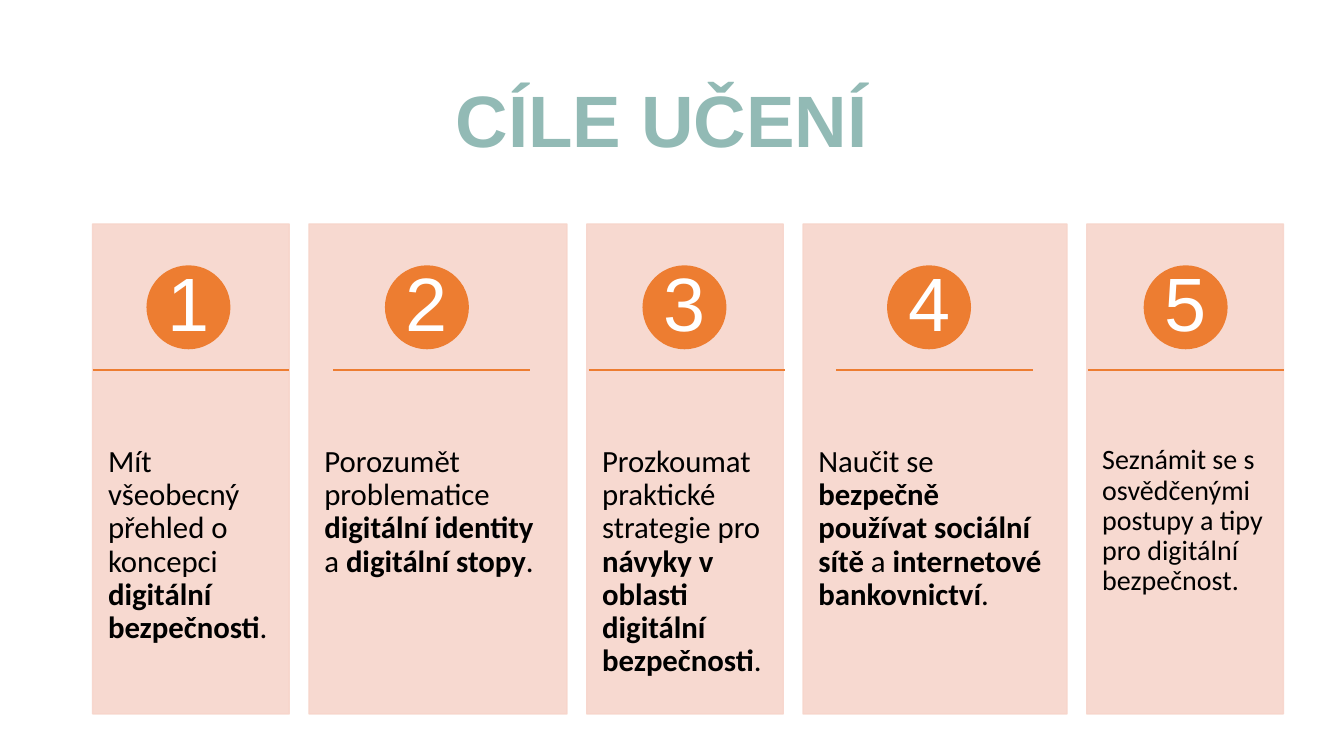
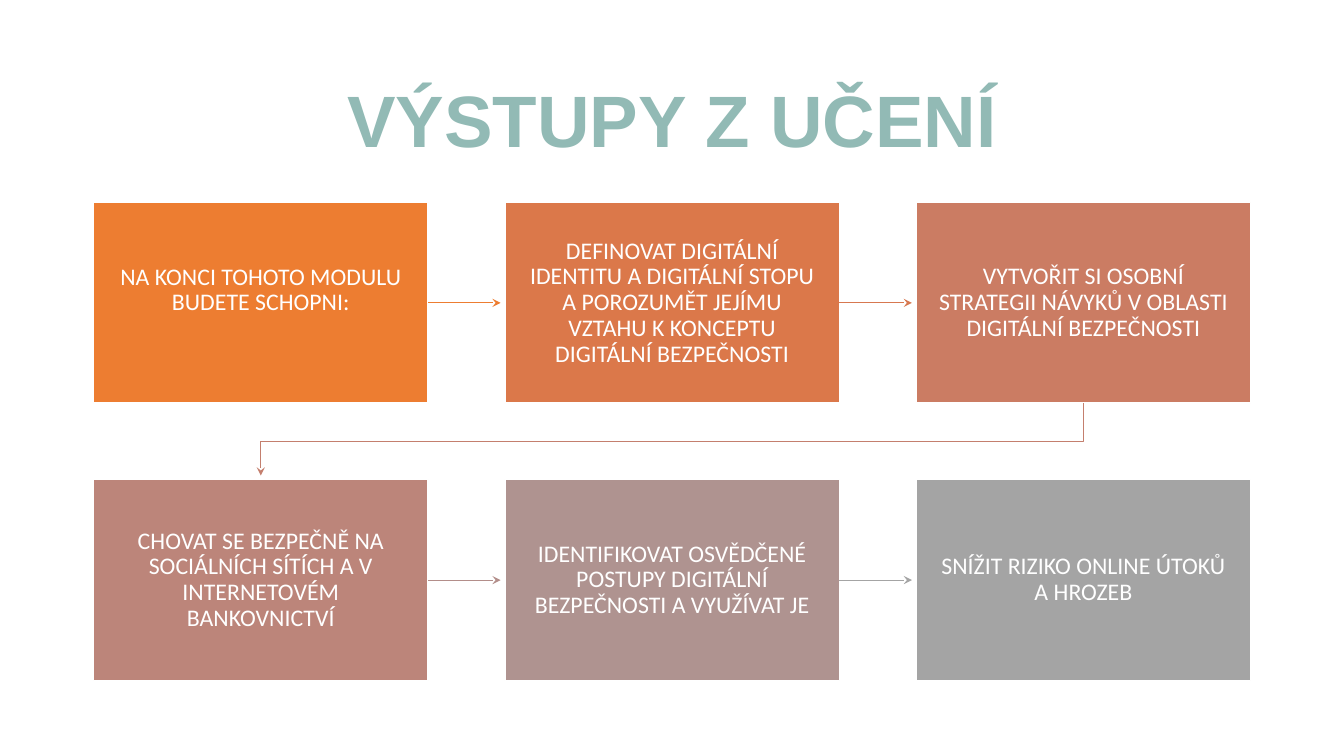
from dataclasses import dataclass
from typing import Any

from lxml.etree import SubElement
from pptx import Presentation
from pptx.dml.color import RGBColor
from pptx.dml.fill import FillFormat
from pptx.dml.line import LineFormat
from pptx.enum.shapes import MSO_CONNECTOR, MSO_SHAPE
from pptx.enum.text import MSO_ANCHOR, MSO_AUTO_SIZE, PP_ALIGN
from pptx.oxml.ns import qn
from pptx.shapes.autoshape import Shape
from pptx.shapes.connector import Connector
from pptx.slide import Slide
from pptx.text.text import TextFrame
from pptx.util import Pt

TITLE_COLOR = "92BAB5"
ACCENT = "ED7D31"
CARD_COLOR = "F7D5CB"
WHITE = "FFFFFF"
BLACK = "000000"

TITLE_BOX = (66, 44, 828, 89)
TITLE_ONLY = 5

CARD_LEFT, CARD_TOP, CARD_HEIGHT, CARD_GAP = 66.2, 160, 350, 14.1
CARD_INSETS = (11, 158.4, 11, 26)
BADGE_TOP, BADGE_SIZE = 190, 59
RULE_TOP, RULE_WIDTH = 264.2, 140.4

STEP_LEFT, STEP_TOP, STEP_WIDTH, STEP_HEIGHT = 66.8, 144.7, 239, 143.3
STEP_PITCH_X, STEP_PITCH_Y, STEP_COLUMNS = 293.8, 198, 3
ARROW_GAP = 3


@dataclass(frozen=True)
class Goal:
    """Phrases alternate between regular and bold."""
    phrases: tuple[str, ...]
    width: float = 140.4
    badge_shift: float = 0
    rule_shift: float = 0
    size: float = 22


@dataclass(frozen=True)
class Step:
    text: str
    color: str
    arrow_color: str = ""
    extra_bottom: float = 0


GOALS = (
    Goal(("Mít všeobecný přehled o koncepci ", "digitální bezpečnosti", "."),
         badge_shift=-1.8),
    Goal(("Porozumět problematice ", "digitální identity ", "a ",
          "digitální stopy", "."), 184.3, -7.9, -4.7),
    Goal(("Prozkoumat praktické strategie pro ",
          "návyky v oblasti digitální bezpečnosti", "."),
         badge_shift=-0.4, rule_shift=1.4),
    Goal(("Naučit se ", "bezpečně používat sociální sítě ", "a ",
          "internetové bankovnictví", "."), 188.6, -4.3, -0.4),
    Goal(("Seznámit se s osvědčenými postupy a tipy pro digitální bezpečnost.",),
         badge_shift=0.4, rule_shift=0.7, size=20),
)

STEPS = (
    Step("NA KONCI TOHOTO MODULU BUDETE SCHOPNI:", ACCENT, ACCENT, 18),
    Step("DEFINOVAT DIGITÁLNÍ IDENTITU A DIGITÁLNÍ STOPU A POROZUMĚT JEJÍMU "
         "VZTAHU K KONCEPTU DIGITÁLNÍ BEZPEČNOSTI", "DB784A", "D77850"),
    Step("VYTVOŘIT SI OSOBNÍ STRATEGII NÁVYKŮ V OBLASTI DIGITÁLNÍ BEZPEČNOSTI",
         "CB7C63", "C47F6E"),
    Step("CHOVAT SE BEZPEČNĚ NA SOCIÁLNÍCH SÍTÍCH A V INTERNETOVÉM BANKOVNICTVÍ",
         "BC857A", "B38E8A"),
    Step("IDENTIFIKOVAT OSVĚDČENÉ POSTUPY DIGITÁLNÍ BEZPEČNOSTI A VYUŽÍVAT JE",
         "AF9390", "A4A4A4"),
    Step("SNÍŽIT RIZIKO ONLINE ÚTOKŮ A HROZEB", "A4A4A4"),
)


def apply_formats(target: Any, formats: dict[str, Any]) -> None:
    for attribute, value in formats.items():
        setattr(target, attribute, value)


def paint(fill: FillFormat, color: str, opacity: int = 100) -> None:
    fill.solid()
    fill.fore_color.rgb = RGBColor.from_string(color)
    if opacity < 100:
        tint = fill._xPr.find(qn("a:solidFill"))[0]
        SubElement(tint, qn("a:alpha"), val=str(opacity * 1000))


def draw_line(line: LineFormat, color: str, width: float, opacity: int = 100,
              arrow: bool = False) -> None:
    line.width = Pt(width)
    paint(line.fill, color, opacity)
    if arrow:
        SubElement(line._get_or_add_ln(), qn("a:tailEnd"), type="stealth")


def write(frame: TextFrame, phrases: tuple[str, ...], size: float, color: str,
          font: str = "Calibri", align: PP_ALIGN = PP_ALIGN.CENTER,
          anchor: MSO_ANCHOR = MSO_ANCHOR.MIDDLE, wrap: bool = True,
          insets: tuple[float, ...] = (7.2, 3.6, 7.2, 3.6),
          all_bold: bool = False) -> None:
    left, top, right, bottom = map(Pt, insets)
    apply_formats(frame, {
        "auto_size": MSO_AUTO_SIZE.NONE, "word_wrap": wrap,
        "vertical_anchor": anchor, "margin_left": left, "margin_top": top,
        "margin_right": right, "margin_bottom": bottom})
    paragraph = frame.paragraphs[0]
    apply_formats(paragraph, {"alignment": align, "line_spacing": 0.9})
    for index, phrase in enumerate(phrases):
        run = paragraph.add_run()
        run.text = phrase
        apply_formats(run.font, {"name": font, "size": Pt(size),
                                 "bold": all_bold or index % 2 == 1})
        paint(run.font.fill, color)


def add_block(slide: Slide, kind: MSO_SHAPE, box: tuple[float, ...],
              color: str, outline: str, opacity: int = 100) -> Shape:
    block = slide.shapes.add_shape(kind, *map(Pt, box))
    block.shadow.inherit = False
    paint(block.fill, color, opacity)
    draw_line(block.line, outline, 1, opacity)
    return block


def add_straight(slide: Slide, start: tuple[float, float],
                 end: tuple[float, float], color: str, width: float,
                 arrow: bool = False) -> Connector:
    straight = slide.shapes.add_connector(
        MSO_CONNECTOR.STRAIGHT, *map(Pt, start + end))
    draw_line(straight.line, color, width, arrow=arrow)
    SubElement(straight._element.spPr, qn("a:effectLst"))
    return straight


def add_titled_slide(deck: Any, heading: str) -> Slide:
    slide = deck.slides.add_slide(deck.slide_layouts[TITLE_ONLY])
    title = slide.shapes.title
    apply_formats(title, dict(zip(("left", "top", "width", "height"),
                                  map(Pt, TITLE_BOX))))
    write(title.text_frame, (heading,), 52, TITLE_COLOR, "Arial", all_bold=True)
    return slide


def add_goal(slide: Slide, number: int, goal: Goal, left: float) -> None:
    center = left + goal.width / 2
    card = add_block(slide, MSO_SHAPE.RECTANGLE,
                     (left, CARD_TOP, goal.width, CARD_HEIGHT),
                     CARD_COLOR, CARD_COLOR, 90)
    write(card.text_frame, goal.phrases, goal.size, BLACK, align=PP_ALIGN.LEFT,
          anchor=MSO_ANCHOR.TOP, insets=CARD_INSETS)
    badge_left = center + goal.badge_shift - BADGE_SIZE / 2
    badge = add_block(slide, MSO_SHAPE.OVAL,
                      (badge_left, BADGE_TOP, BADGE_SIZE, BADGE_SIZE),
                      ACCENT, ACCENT)
    write(badge.text_frame, (str(number),), 54, WHITE, "Arial",
          wrap=False, insets=(0, 0, 0, 0))
    rule_left = center + goal.rule_shift - RULE_WIDTH / 2
    add_straight(slide, (rule_left, RULE_TOP),
                 (rule_left + RULE_WIDTH, RULE_TOP), ACCENT, 1)


def step_corner(index: int) -> tuple[float, float]:
    row, column = divmod(index, STEP_COLUMNS)
    return STEP_LEFT + column * STEP_PITCH_X, STEP_TOP + row * STEP_PITCH_Y


def add_step(slide: Slide, index: int, step: Step) -> Shape:
    block = add_block(slide, MSO_SHAPE.RECTANGLE,
                      (*step_corner(index), STEP_WIDTH, STEP_HEIGHT),
                      step.color, WHITE)
    write(block.text_frame, (step.text,), 17, WHITE,
          insets=(11.5, 12, 11.5, 12 + step.extra_bottom))
    return block


def add_row_turn(slide: Slide, index: int, color: str) -> None:
    """Lead from the last step of a row down to the first of the next."""
    left, top = step_corner(index)
    next_left, next_top = step_corner(index + 1)
    start_x, end_x = left + STEP_WIDTH / 2, next_left + STEP_WIDTH / 2
    bottom = top + STEP_HEIGHT
    middle = (bottom + next_top) / 2
    outline = slide.shapes.build_freeform(Pt(start_x), Pt(bottom))
    outline.add_line_segments(
        [(Pt(x), Pt(y)) for x, y in ((start_x, middle), (end_x, middle),
                                     (end_x, next_top - ARROW_GAP))],
        close=False)
    turn = outline.convert_to_shape()
    turn.shadow.inherit = False
    turn.fill.background()
    draw_line(turn.line, color, 0.75, arrow=True)


def add_step_arrow(slide: Slide, index: int, block: Shape, color: str) -> None:
    if (index + 1) % STEP_COLUMNS == 0:
        add_row_turn(slide, index, color)
        return
    left, top = step_corner(index)
    middle = top + STEP_HEIGHT / 2
    arrow = add_straight(slide, (left + STEP_WIDTH, middle),
                         (left + STEP_PITCH_X - ARROW_GAP, middle),
                         color, 0.75, arrow=True)
    arrow.begin_connect(block, 3)


def build_goals(deck: Any) -> None:
    slide = add_titled_slide(deck, "CÍLE UČENÍ ")
    left = CARD_LEFT
    for number, goal in enumerate(GOALS, start=1):
        add_goal(slide, number, goal, left)
        left += goal.width + CARD_GAP


def build_outcomes(deck: Any) -> None:
    slide = add_titled_slide(deck, "VÝSTUPY Z UČENÍ")
    for index, step in enumerate(STEPS):
        block = add_step(slide, index, step)
        if step.arrow_color:
            add_step_arrow(slide, index, block, step.arrow_color)


def main() -> None:
    deck = Presentation()
    deck.slide_width, deck.slide_height = Pt(960), Pt(540)
    build_goals(deck)
    build_outcomes(deck)
    deck.save("out.pptx")


if __name__ == "__main__":
    main()
